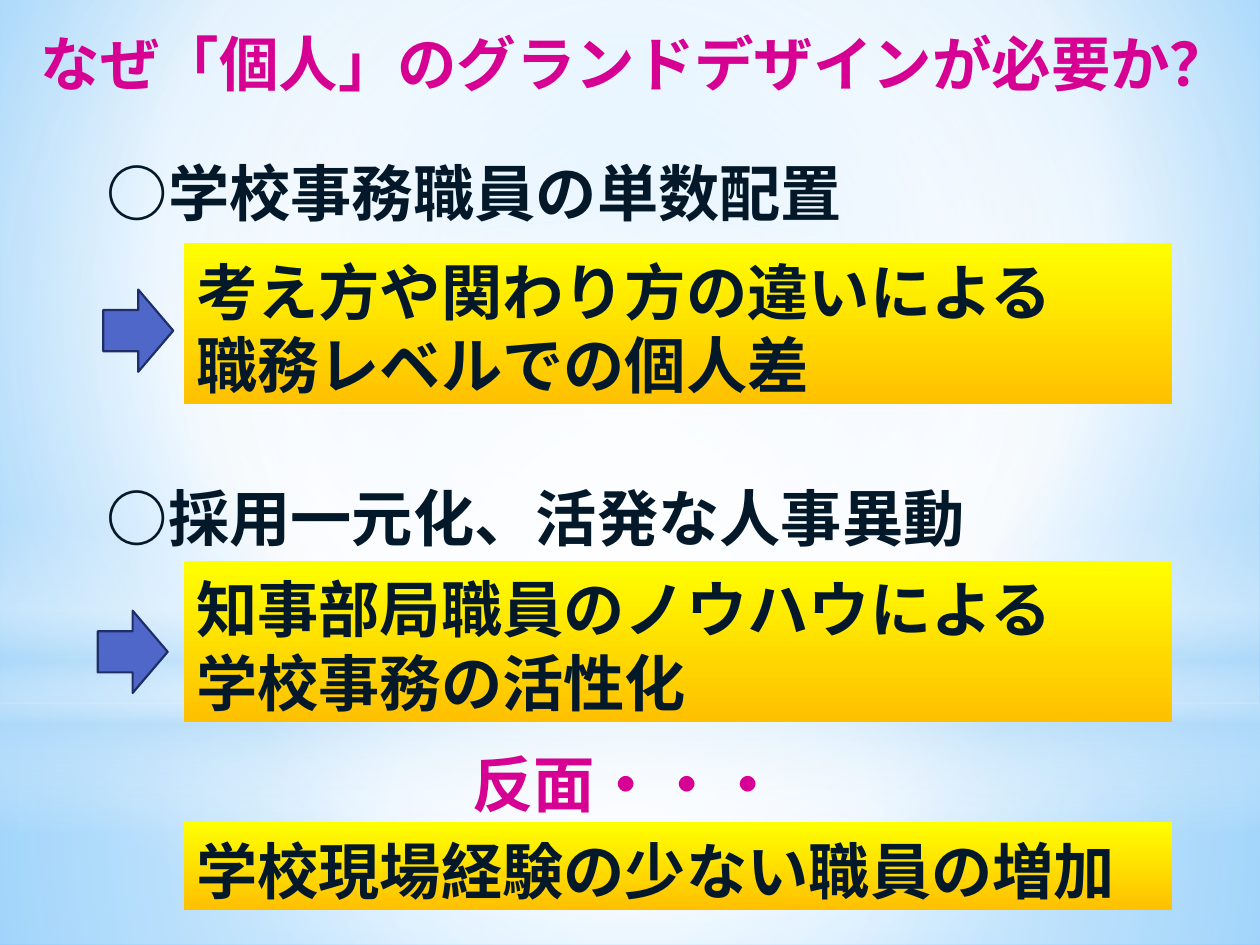
from lxml.etree import SubElement
from pptx import Presentation
from pptx.dml.color import RGBColor
from pptx.enum.shapes import MSO_SHAPE as Shape
from pptx.enum.text import MSO_ANCHOR as Anchor, PP_ALIGN as Align
from pptx.oxml.ns import qn
from pptx.util import Pt

JAPANESE, LATIN = "Noto Sans CJK JP", "Karla"
PINK, INK = "D60093", "031828"
ARROW_FILL, ARROW_LINE = "4E67C8", "1F2E69"
WIDTH, HEIGHT = 720, 540
CENTRE = (50, 50, 50, 50)

BACKGROUND = [(0, "9ED5FF", 100), (60, "FFFFFF", 100), (100, "5BB9FF", 100)]
YELLOW = [(0, "FFFF00", 100), (100, "FFC000", 100)]
BACKDROP = [
    (Shape.RECTANGLE, 401.76, 138.24, CENTRE,
     [(0, "FFFFFF", 91), (37, "FFFFFF", 76), (100, "B4DCFA", 79)]),
    (Shape.RECTANGLE, 0, 401.76, CENTRE,
     [(0, "FFFFFF", 89), (48, "FFFFFF", 62), (100, "B4DCFA", 79)]),
    (Shape.RECTANGLE, 296.64, 180, None,
     [(0, "FFFFFF", 0), (29, "FFFFFF", 30), (45, "B4DCFA", 40),
      (55, "FFFFFF", 26), (65, "B4DCFA", 60), (100, "FFFFFF", 0)]),
    (Shape.OVAL, 126, 401.76, CENTRE,
     [(0, "FFFFFF", 100), (56, "FFFFFF", 0)]),
]

TITLE = "なぜ「個人」のグランドデザインが必要か？"
HEADINGS = [
    (82.8, "○学校事務職員の単数配置"),
    (268.6, "○採用一元化、活発な人事異動"),
]
BOXES = [
    (139, 92, "考え方や関わり方の違いによる\n職務レベルでの個人差"),
    (320.5, 92, "知事部局職員のノウハウによる\n学校事務の活性化"),
    (470, 50, "学校現場経験の少ない職員の増加"),
]
ARROWS = [(59, 165.5), (55.8, 349)]
CONTRAST = "反面・・・"


def colour(value):
    return RGBColor.from_string(value)


def paint_gradient(fill, element, stops, focus=None):
    fill.gradient()
    gradient = element.xpath(".//a:gradFill")[0]
    for child in list(gradient):
        gradient.remove(child)
    stop_list = SubElement(gradient, qn("a:gsLst"))
    for position, value, opacity in stops:
        stop = SubElement(stop_list, qn("a:gs"), pos=str(position * 1000))
        tint = SubElement(stop, qn("a:srgbClr"), val=value)
        if opacity < 100:
            SubElement(tint, qn("a:alpha"), val=str(opacity * 1000))
    if focus:
        circle = SubElement(gradient, qn("a:path"), path="circle")
        sides = {side: str(share * 1000) for side, share in zip("ltrb", focus)}
        SubElement(circle, qn("a:fillToRect"), sides)
    else:
        SubElement(gradient, qn("a:lin"), ang="5400000", scaled="0")


def add_shape(slide, kind, left, top, width, height):
    shape = slide.shapes.add_shape(kind, Pt(left), Pt(top), Pt(width), Pt(height))
    shape.shadow.inherit = False
    shape.line.fill.background()
    return shape


def write(shape, text, size=35, value=INK, font=JAPANESE, align=Align.LEFT):
    frame = shape.text_frame
    frame.word_wrap = True
    frame.vertical_anchor = Anchor.TOP
    frame.margin_top, frame.margin_bottom = Pt(6), Pt(0)
    frame.text = text
    for paragraph in frame.paragraphs:
        paragraph.alignment = align
        paragraph.line_spacing = Pt(size * 1.2)
        for run in paragraph.runs:
            run.font.size = Pt(size)
            run.font.bold = True
            run.font.name = font
            run.font.color.rgb = colour(value)
            SubElement(run.font._element, qn("a:ea"), typeface=font)


def add_text(slide, left, top, width, height, text, **style):
    box = slide.shapes.add_textbox(Pt(left), Pt(top), Pt(width), Pt(height))
    write(box, text, **style)


def main():
    presentation = Presentation()
    presentation.slide_width, presentation.slide_height = Pt(WIDTH), Pt(HEIGHT)
    slide = presentation.slides.add_slide(presentation.slide_layouts[6])
    paint_gradient(slide.background.fill, slide.element, BACKGROUND, (20, 10, 20, 60))

    for kind, top, height, focus, stops in BACKDROP:
        shape = add_shape(slide, kind, 0, top, WIDTH, height)
        paint_gradient(shape.fill, shape.element, stops, focus)

    add_text(slide, 3, 9.4, WIDTH, 48, TITLE, size=34, value=PINK, align=Align.CENTER)
    for top, text in HEADINGS:
        add_text(slide, 54, top, 622, 50, text)

    for left, top in ARROWS:
        arrow = add_shape(slide, Shape.RIGHT_ARROW, left, top, 40, 47)
        arrow.fill.solid()
        arrow.fill.fore_color.rgb = colour(ARROW_FILL)
        arrow.line.color.rgb = colour(ARROW_LINE)
        arrow.line.width = Pt(1.25)

    for top, height, text in BOXES:
        box = add_shape(slide, Shape.RECTANGLE, 105, top, 565, height)
        paint_gradient(box.fill, box.element, YELLOW)
        write(box, text)

    add_text(slide, 263, 420.5, 217, 50, CONTRAST, value=PINK, font=LATIN)
    presentation.save("out.pptx")


if __name__ == "__main__":
    main()
